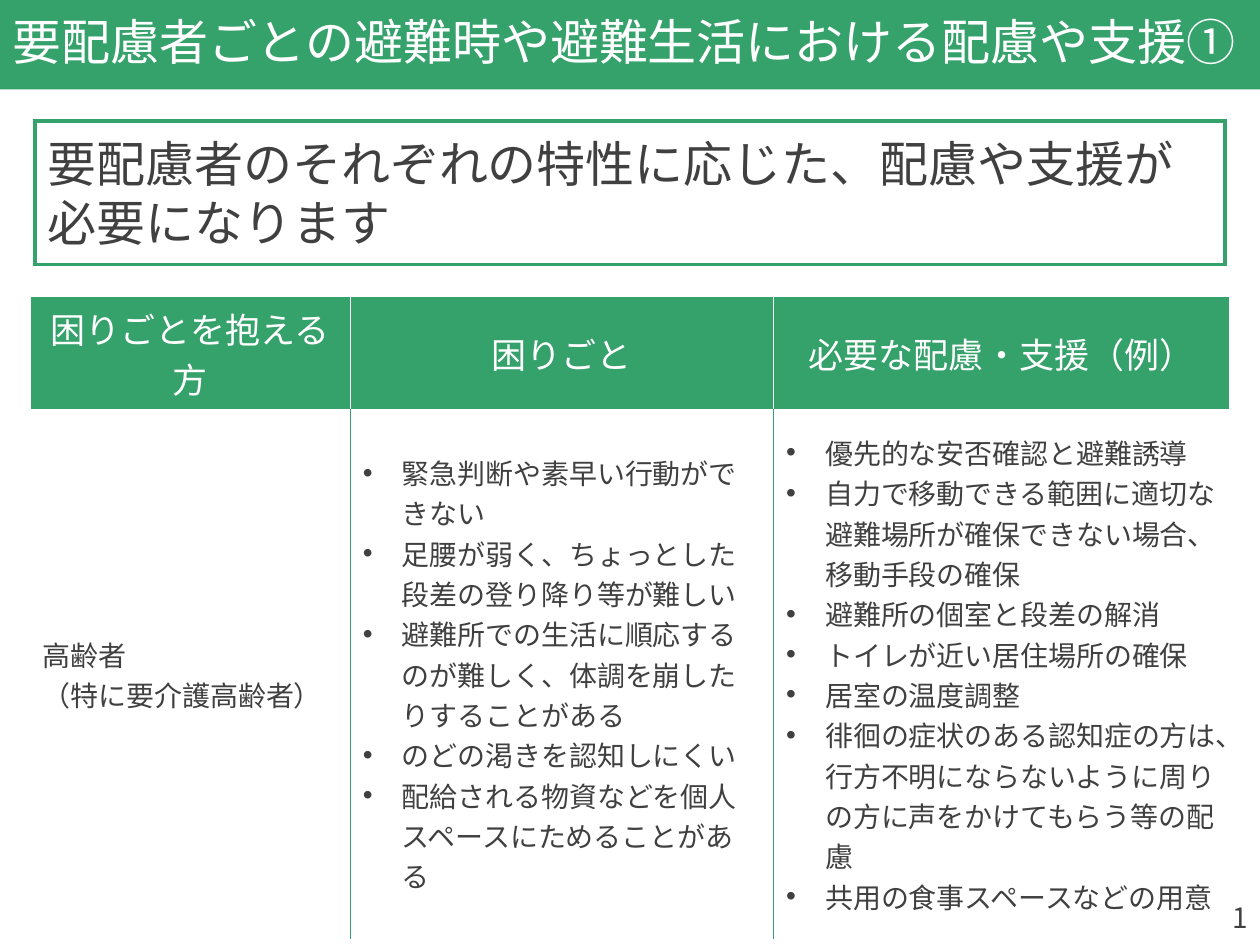
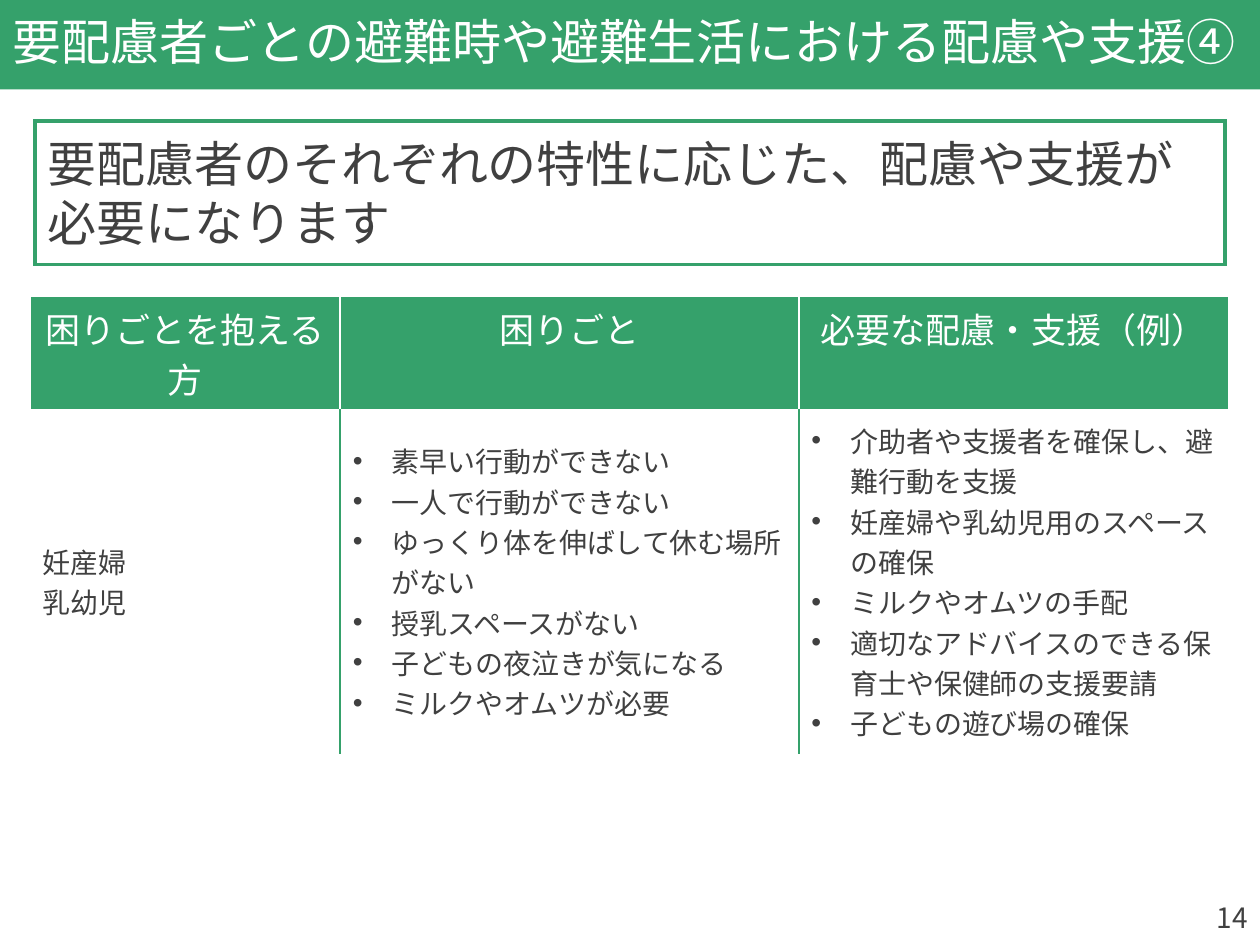
from lxml.etree import SubElement
from pptx import Presentation
from pptx.dml.color import RGBColor
from pptx.enum.shapes import MSO_SHAPE
from pptx.enum.text import MSO_ANCHOR, PP_ALIGN
from pptx.oxml.ns import qn
from pptx.util import Inches, Pt

FONT = "Noto Sans CJK JP"
GREEN, WHITE, INK = "35A16B", "FFFFFF", "404040"
BULLET_INDENT = Inches(0.31)
HEADING_HEIGHT = 0.9

TITLE = "要配慮者ごとの避難時や避難生活における配慮や支援"
MESSAGE = "要配慮者のそれぞれの特性に応じた、配慮や支援が必要になります"
HEADINGS = ["困りごとを抱える方", "困りごと", "必要な配慮・支援（例）"]

PAGES = [
    {
        "mark": "①",
        "number": "11",
        "widths": [2.54, 3.36, 3.62],
        "body_height": 4.2,
        "heading_anchor": MSO_ANCHOR.MIDDLE,
        "people": ["高齢者", "（特に要介護高齢者）"],
        "troubles": [
            "緊急判断や素早い行動ができない",
            "足腰が弱く、ちょっとした段差の登り降り等が難しい",
            "避難所での生活に順応するのが難しく、体調を崩したりすることがある",
            "のどの渇きを認知しにくい",
            "配給される物資などを個人スペースにためることがある",
        ],
        "support": [
            "優先的な安否確認と避難誘導",
            "自力で移動できる範囲に適切な避難場所が確保できない場合、移動手段の確保",
            "避難所の個室と段差の解消",
            "トイレが近い居住場所の確保",
            "居室の温度調整",
            "徘徊の症状のある認知症の方は、行方不明にならないように周りの方に声をかけてもらう等の配慮",
            "共用の食事スペースなどの用意",
        ],
    },
    {
        "mark": "④",
        "number": "14",
        "widths": [2.46, 3.64, 3.41],
        "body_height": 2.73,
        "heading_anchor": MSO_ANCHOR.TOP,
        "people": ["妊産婦", "乳幼児"],
        "troubles": [
            "素早い行動ができない",
            "一人で行動ができない",
            "ゆっくり体を伸ばして休む場所がない",
            "授乳スペースがない",
            "子どもの夜泣きが気になる",
            "ミルクやオムツが必要",
        ],
        "support": [
            "介助者や支援者を確保し、避難行動を支援",
            "妊産婦や乳幼児用のスペースの確保",
            "ミルクやオムツの手配",
            "適切なアドバイスのできる保育士や保健師の支援要請",
            "子どもの遊び場の確保",
        ],
    },
]


def color(code):
    return RGBColor.from_string(code)


def write(frame, lines, size, ink, align=PP_ALIGN.LEFT, bullets=False, spacing=None):
    """Fill a text frame with one paragraph per line."""
    for index, line in enumerate(lines):
        para = frame.paragraphs[0] if index == 0 else frame.add_paragraph()
        para.alignment = align
        para.line_spacing = spacing
        properties = para._p.get_or_add_pPr()
        properties.set("hangingPunct", "1")
        if bullets:
            properties.set("marL", str(BULLET_INDENT))
            properties.set("indent", str(-BULLET_INDENT))
            SubElement(properties, qn("a:buFont"), typeface="Arial")
            SubElement(properties, qn("a:buChar"), char="•")
        span = para.add_run()
        span.text = line
        span.font.size = Pt(size)
        span.font.name = FONT
        span.font.color.rgb = color(ink)
        SubElement(span._r.get_or_add_rPr(), qn("a:ea"), typeface=FONT)


def add_panel(page, place, fill, text, ink, line=None, spacing=None):
    panel = page.shapes.add_shape(MSO_SHAPE.RECTANGLE, *map(Inches, place))
    panel.shadow.inherit = False
    panel.fill.solid()
    panel.fill.fore_color.rgb = color(fill)
    if line:
        panel.line.color.rgb = color(line)
        panel.line.width = Pt(2.25)
        SubElement(panel.line._get_or_add_ln(), qn("a:miter"), lim="800000")
    else:
        panel.line.fill.background()
    panel.text_frame.word_wrap = True
    panel.text_frame.vertical_anchor = MSO_ANCHOR.MIDDLE
    write(panel.text_frame, [text], 28, ink, spacing=spacing)


def add_number(page, number):
    box = page.shapes.add_textbox(*map(Inches, (7.75, 7.1, 2.25, 0.4)))
    box.text_frame.word_wrap = True
    write(box.text_frame, [number], 16, INK, PP_ALIGN.RIGHT)


def style_cell(cell, fill, anchor, left=WHITE, right=WHITE, bottom_width=1):
    cell.vertical_anchor = anchor
    properties = cell._tc.get_or_add_tcPr()
    borders = [("L", left, 1), ("R", right, 1), ("T", WHITE, 1), ("B", WHITE, bottom_width)]
    for side, code, width in borders:
        edge = SubElement(properties, qn(f"a:ln{side}"), w=str(Pt(width)))
        SubElement(SubElement(edge, qn("a:solidFill")), qn("a:srgbClr"), val=code)
    cell.fill.solid()
    cell.fill.fore_color.rgb = color(fill)


def add_needs_table(page, content):
    widths, heights = content["widths"], [HEADING_HEIGHT, content["body_height"]]
    place = (0.24, 2.35, sum(widths), sum(heights))
    table = page.shapes.add_table(2, len(widths), *map(Inches, place)).table
    table.first_row = table.horz_banding = False
    for row, height in zip(table.rows, heights):
        row.height = Inches(height)
    body = [content["people"], content["troubles"], content["support"]]
    last = len(widths) - 1
    for index, width in enumerate(widths):
        table.columns[index].width = Inches(width)
        heading, cell = table.cell(0, index), table.cell(1, index)
        style_cell(heading, GREEN, content["heading_anchor"], bottom_width=1)
        write(heading.text_frame, [HEADINGS[index]], 20, WHITE, PP_ALIGN.CENTER)
        style_cell(
            cell, WHITE, MSO_ANCHOR.MIDDLE,
            left=GREEN if index > 0 else WHITE,
            right=GREEN if index < last else WHITE,
        )
        write(cell.text_frame, body[index], 16, INK, bullets=index > 0)


def main():
    deck = Presentation()
    deck.slide_width, deck.slide_height = Inches(10), Inches(7.5)
    for content in PAGES:
        page = deck.slides.add_slide(deck.slide_layouts[6])
        add_number(page, content["number"])
        add_panel(page, (0, 0, 10, 0.71), GREEN, TITLE + content["mark"], WHITE, spacing=0.9)
        add_panel(page, (0.28, 0.96, 9.44, 1.14), WHITE, MESSAGE, INK, line=GREEN)
        add_needs_table(page, content)
    deck.save("out.pptx")


if __name__ == "__main__":
    main()
